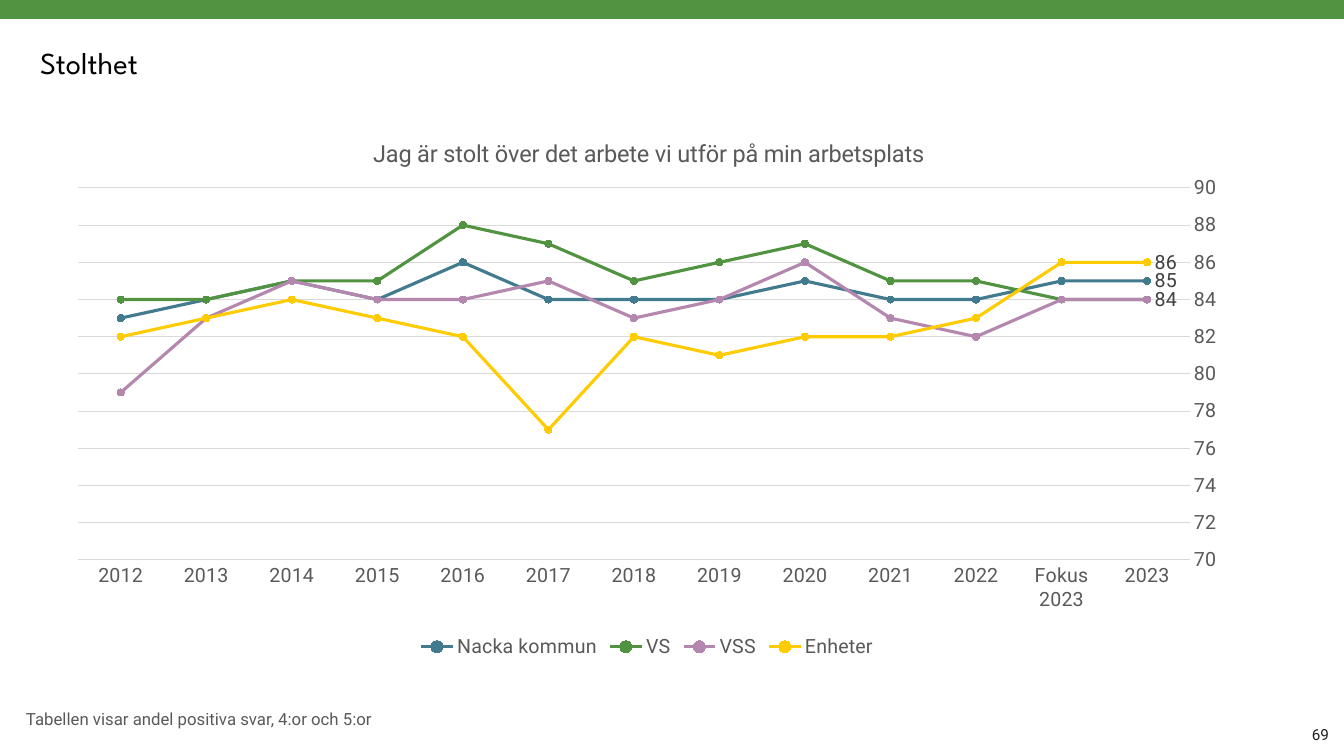
import pptx
import pptx.chart.data
import pptx.dml.color
import pptx.enum.chart
import pptx.enum.shapes
import pptx.enum.text
import pptx.oxml
import pptx.oxml.ns
import pptx.util

COLORS = {
    "green": "529341", "blue": "427A8E", "purple": "B387AE", "yellow": "FFCC03",
    "black": "000000", "ink": "231F20", "gray": "595959", "label": "404040", "grid": "D9D9D9",
}
SLIDE_SIZE = (1344, 756)
BAND = (0, -2, 1344, 21)
CHART = (54, 113, 1186, 550)
PLOT = (78, 188, 1112, 372)
CHART_TITLE = (369, 134)
CHART_TITLE_TEXT = "Jag är stolt över det arbete vi utför på min arbetsplats"

# box, text, size, font, color, alignment, inset
TEXTS = [
    ((40, 44, 802, 37), "Stolthet", 21.8, "League Spartan", "black", "LEFT", 0),
    ((16, 704, 535, 50), "Tabellen visar andel positiva svar, 4:or och 5:or",
     12, "Roboto", "gray", "LEFT", 10),
    ((1259, 725, 70, 18), "69", 10.9, "Roboto", "ink", "RIGHT", 0),
]
CATEGORIES = ["2023", "Fokus 2023", "2022", "2021", "2020", "2019", "2018",
              "2017", "2016", "2015", "2014", "2013", "2012"]
# name, color, newest value labelled, values from newest to oldest
SERIES = [
    ("Nacka kommun", "blue", True, [85, 85, 84, 84, 85, 84, 84, 84, 86, 84, 85, 84, 83]),
    ("VS", "green", False, [84, 84, 85, 85, 87, 86, 85, 87, 88, 85, 85, 84, 84]),
    ("VSS", "purple", True, [84, 84, 82, 83, 86, 84, 83, 85, 84, 84, 85, 83, 79]),
    ("Enheter", "yellow", True, [86, 86, 83, 82, 82, 81, 82, 77, 82, 83, 84, 83, 82]),
]


def px(length):
    return pptx.util.Emu(round(length * 914400 / 100.8))


def rgb(name):
    return pptx.dml.color.RGBColor.from_string(COLORS[name])


def set_font(font, size, color, name="Roboto"):
    font.size = pptx.util.Pt(size)
    font.name = name
    font.bold = False
    font.color.rgb = rgb(color)


def set_line(line, color, width):
    line.color.rgb = rgb(color)
    line.width = pptx.util.Pt(width)


def add_text(slide, box, text, size, font, color, alignment, inset):
    frame = slide.shapes.add_textbox(*map(px, box)).text_frame
    frame.word_wrap = True
    frame.margin_left = frame.margin_right = px(inset)
    frame.margin_top = frame.margin_bottom = px(inset / 2)
    frame.text = text
    paragraph = frame.paragraphs[0]
    paragraph.alignment = getattr(pptx.enum.text.PP_ALIGN, alignment)
    set_font(paragraph.runs[0].font, size, color, font)


def place_in_chart(element, box, index, inner=False):
    """Fix a chart part at a slide position; index is where its layout belongs."""
    old = element.find(pptx.oxml.ns.qn("c:layout"))
    if old is not None:
        element.remove(old)
    values = {"x": (box[0] - CHART[0]) / CHART[2], "y": (box[1] - CHART[1]) / CHART[3]}
    if len(box) == 4:
        values.update(w=box[2] / CHART[2], h=box[3] / CHART[3])
    target = '<c:layoutTarget val="inner"/>' if inner else ""
    modes = '<c:xMode val="edge"/><c:yMode val="edge"/>'
    parts = "".join(f'<c:{key} val="{value:.4f}"/>' for key, value in values.items())
    element.insert(index, pptx.oxml.parse_xml(
        f'<c:layout {pptx.oxml.ns.nsdecls("c")}><c:manualLayout>'
        f"{target}{modes}{parts}</c:manualLayout></c:layout>"))


def style_axes(chart):
    for axis in (chart.category_axis, chart.value_axis):
        axis.major_tick_mark = axis.minor_tick_mark = pptx.enum.chart.XL_TICK_MARK.NONE
        set_font(axis.tick_labels.font, 14, "gray")
    chart.category_axis.reverse_order = True
    set_line(chart.category_axis.format.line, "grid", 0.75)
    values = chart.value_axis
    values.minimum_scale, values.maximum_scale, values.major_unit = 70, 90, 2
    values.format.line.fill.background()
    set_line(values.major_gridlines.format.line, "grid", 0.75)


def style_series(series, color, labelled):
    series.smooth = False
    set_line(series.format.line, color, 2.25)
    series.marker.style = pptx.enum.chart.XL_MARKER_STYLE.CIRCLE
    series.marker.size = 5
    series.marker.format.fill.solid()
    series.marker.format.fill.fore_color.rgb = rgb(color)
    set_line(series.marker.format.line, color, 0.75)
    if labelled:
        series.data_labels.show_value = False
        label = series.points[0].data_label
        set_font(label.font, 14, "label")
        label.position = pptx.enum.chart.XL_LABEL_POSITION.RIGHT


def add_line_chart(slide):
    data = pptx.chart.data.CategoryChartData()
    data.categories = CATEGORIES
    for name, _, _, values in SERIES:
        data.add_series(name, values)
    chart = slide.shapes.add_chart(
        pptx.enum.chart.XL_CHART_TYPE.LINE_MARKERS, *map(px, CHART), data).chart
    set_font(chart.font, 14, "black")
    chart.plots[0].vary_by_categories = False
    title = chart.chart_title
    title.text_frame.text = CHART_TITLE_TEXT
    set_font(title.text_frame.paragraphs[0].runs[0].font, 16.8, "gray")
    place_in_chart(title.text_frame._txBody.getparent().getparent(), CHART_TITLE, 1)
    place_in_chart(chart.plots[0]._element.getparent(), PLOT, 0, inner=True)
    chart.has_legend = True
    chart.legend.position = pptx.enum.chart.XL_LEGEND_POSITION.BOTTOM
    chart.legend.include_in_layout = False
    set_font(chart.legend.font, 14, "gray")
    style_axes(chart)
    for series, (_, color, labelled, _) in zip(chart.plots[0].series, SERIES):
        style_series(series, color, labelled)


def main():
    presentation = pptx.Presentation()
    presentation.slide_width, presentation.slide_height = map(px, SLIDE_SIZE)
    slide = presentation.slides.add_slide(presentation.slide_layouts[6])
    band = slide.shapes.add_shape(pptx.enum.shapes.MSO_SHAPE.RECTANGLE, *map(px, BAND))
    band.shadow.inherit = False
    band.fill.solid()
    band.fill.fore_color.rgb = rgb("green")
    band.line.fill.background()
    for text in TEXTS:
        add_text(slide, *text)
    add_line_chart(slide)
    presentation.save("out.pptx")


if __name__ == "__main__":
    main()
